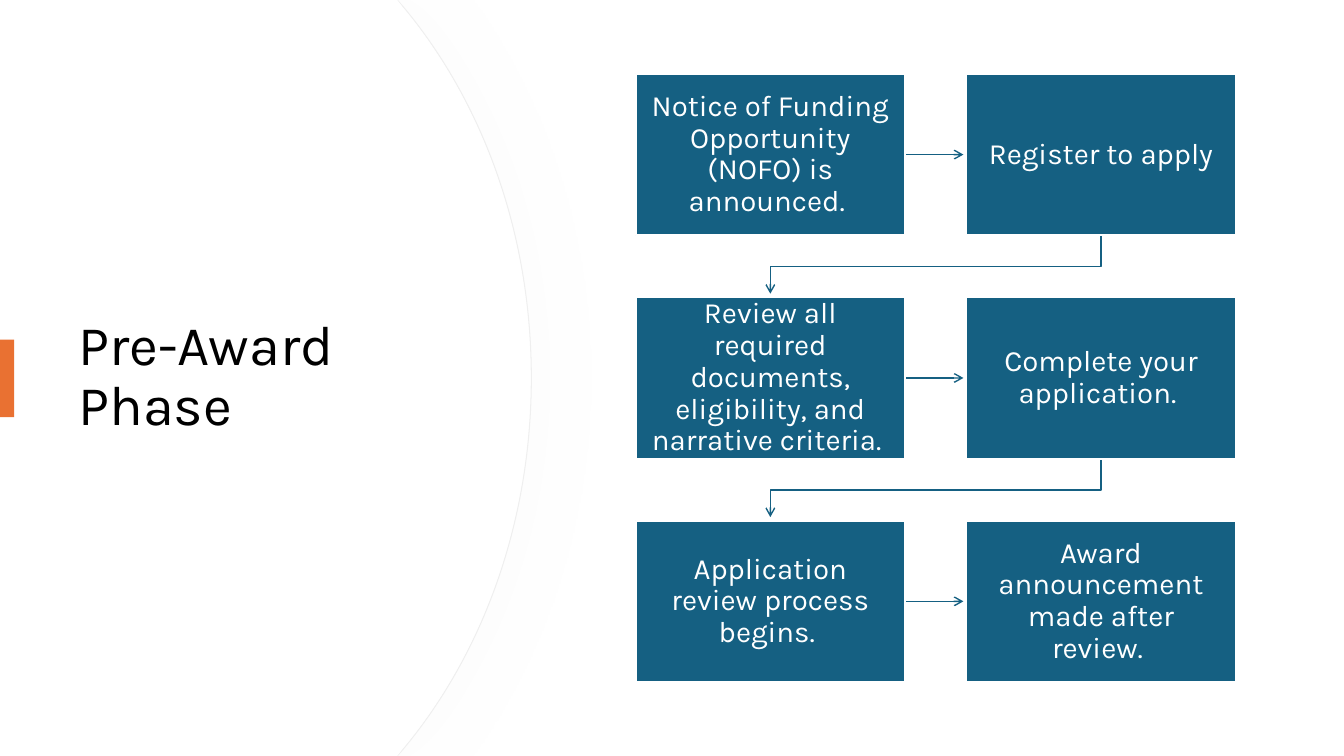
from lxml import etree
from pptx import Presentation
from pptx.dml.color import RGBColor
from pptx.enum import shapes, text
from pptx.oxml.ns import qn
from pptx.util import Inches, Pt

TITLE = "Pre-Award Phase"
STEPS = [
    ("Notice of Funding Opportunity (NOFO) is announced. ", "Register to apply"),
    ("Review all required documents, eligibility, and narrative criteria. ",
     "Complete your application. "),
    ("Application review process begins. ", "Award announcement made after review. "),
]
COLORS = {"white": "FFFFFF", "black": "000000", "blue": "156082",
          "orange": "E97132", "edge": "EFEFEF", "shadow": "D9D9D9"}
FONT = "Karla"
SLIDE_W, SLIDE_H = 13.33, 7.5
BOX_W, BOX_H = 2.67, 1.6
COL_MIDS = (7.64, 10.92)
MID_Y = SLIDE_H / 2
ROW_STEP = 0.83 * BOX_W
ARROW_LEN, ARROW_H = 0.58, 0.1
PANEL_EDGES = (5.27, 5.26)
TAGS = {"M": "a:moveTo", "L": "a:lnTo", "C": "a:cubicBezTo", "Z": "a:close"}

prs = Presentation()
prs.slide_width, prs.slide_height = Inches(SLIDE_W), Inches(SLIDE_H)
slide = prs.slides.add_slide(prs.slide_layouts[6])


def rgb(name):
    return RGBColor.from_string(COLORS[name])


def paint(sp, fill=None, line=None, width=1):
    sp.shadow.inherit = False
    if fill:
        sp.fill.solid()
        sp.fill.fore_color.rgb = rgb(fill)
    else:
        sp.fill.background()
    if line:
        sp.line.color.rgb = rgb(line)
        sp.line.width = Pt(width)
    else:
        sp.line.fill.background()


def outline(left, top, width, height, steps):
    x, y, w, h = [Inches(v) for v in (left, top, width, height)]
    builder = slide.shapes.build_freeform(x, y)
    builder.add_line_segments([(x + w, y), (x + w, y + h), (x, y + h)])
    sp = builder.convert_to_shape()
    route = sp._element.spPr.find(".//" + qn("a:path"))
    for child in list(route):
        route.remove(child)
    for kind, *points in steps:
        step = etree.SubElement(route, qn(TAGS[kind]))
        for px, py in points:
            etree.SubElement(step, qn("a:pt"), x=str(Inches(px) - x), y=str(Inches(py) - y))
    return sp


def write(sp, words, size, color, align):
    tf = sp.text_frame
    tf.word_wrap = True
    tf.vertical_anchor = text.MSO_ANCHOR.MIDDLE
    p = tf.paragraphs[0]
    p.text = words
    p.alignment = align
    p.line_spacing = 0.9
    p.font.size = Pt(size)
    p.font.name = FONT
    p.font.color.rgb = rgb(color)
    return tf


def panel(edge):
    near, far = edge - 1.26, edge - 0.48
    return outline(0, 0, edge, SLIDE_H, [
        ("M", (0, 0)), ("L", (3.94, 0)), ("L", (near, 0.08)),
        ("C", (far, 1.02), (edge, 2.32), (edge, MID_Y)),
        ("C", (edge, 5.18), (far, 6.48), (near, 7.42)),
        ("L", (3.94, SLIDE_H)), ("L", (0, SLIDE_H)), ("Z",)])


def add_shadow(sp):
    effects = sp._element.spPr.find(qn("a:effectLst"))
    shadow = etree.SubElement(effects, qn("a:outerShdw"), blurRad=str(Pt(50)),
                              dist=str(Pt(3)), dir="0", algn="l", rotWithShape="0")
    color = etree.SubElement(shadow, qn("a:srgbClr"), val=COLORS["shadow"])
    etree.SubElement(color, qn("a:alpha"), val="7000")


def arrow(left, top, width, height, points):
    first, *rest = points
    sp = outline(left, top, width, height, [("M", first), *(("L", pt) for pt in rest)])
    paint(sp, line="blue")
    etree.SubElement(sp.line._get_or_add_ln(), qn("a:tailEnd"), type="arrow")


back, front = [panel(edge) for edge in PANEL_EDGES]
paint(back, "white", "edge", 0.75)
add_shadow(back)
paint(front, "white")

title = slide.shapes.add_textbox(Inches(0.68), Inches(1.27), Inches(3.94), Inches(4.95))
write(title, TITLE, 40, "black", text.PP_ALIGN.LEFT)

accent = slide.shapes.add_shape(shapes.MSO_SHAPE.RECTANGLE, 0, Inches(3.37),
                                Inches(0.14), Inches(0.77))
paint(accent, "orange")

left_mid, right_mid = COL_MIDS
for row, pair in enumerate(STEPS):
    mid = MID_Y + (row - 1) * ROW_STEP
    top, bottom = mid - BOX_H / 2, mid + BOX_H / 2

    start = left_mid + BOX_W / 2
    arrow(start, mid - ARROW_H / 2, ARROW_LEN, ARROW_H,
          [(start, mid), (start + ARROW_LEN, mid)])
    if row < len(STEPS) - 1:
        turn, end = bottom + 0.31, bottom + ARROW_LEN
        arrow(left_mid, bottom, right_mid - left_mid, ARROW_LEN,
              [(right_mid, bottom), (right_mid, turn), (left_mid, turn), (left_mid, end)])

    for center, words in zip(COL_MIDS, pair):
        box = slide.shapes.add_shape(
            shapes.MSO_SHAPE.RECTANGLE, Inches(center - BOX_W / 2), Inches(top),
            Inches(BOX_W), Inches(BOX_H))
        paint(box, "blue", "white", 1.5)
        tf = write(box, words, 21, "white", text.PP_ALIGN.CENTER)
        tf.margin_left = tf.margin_right = Inches(0.13)
        tf.margin_top = tf.margin_bottom = Inches(0.14)

prs.save("out.pptx")
